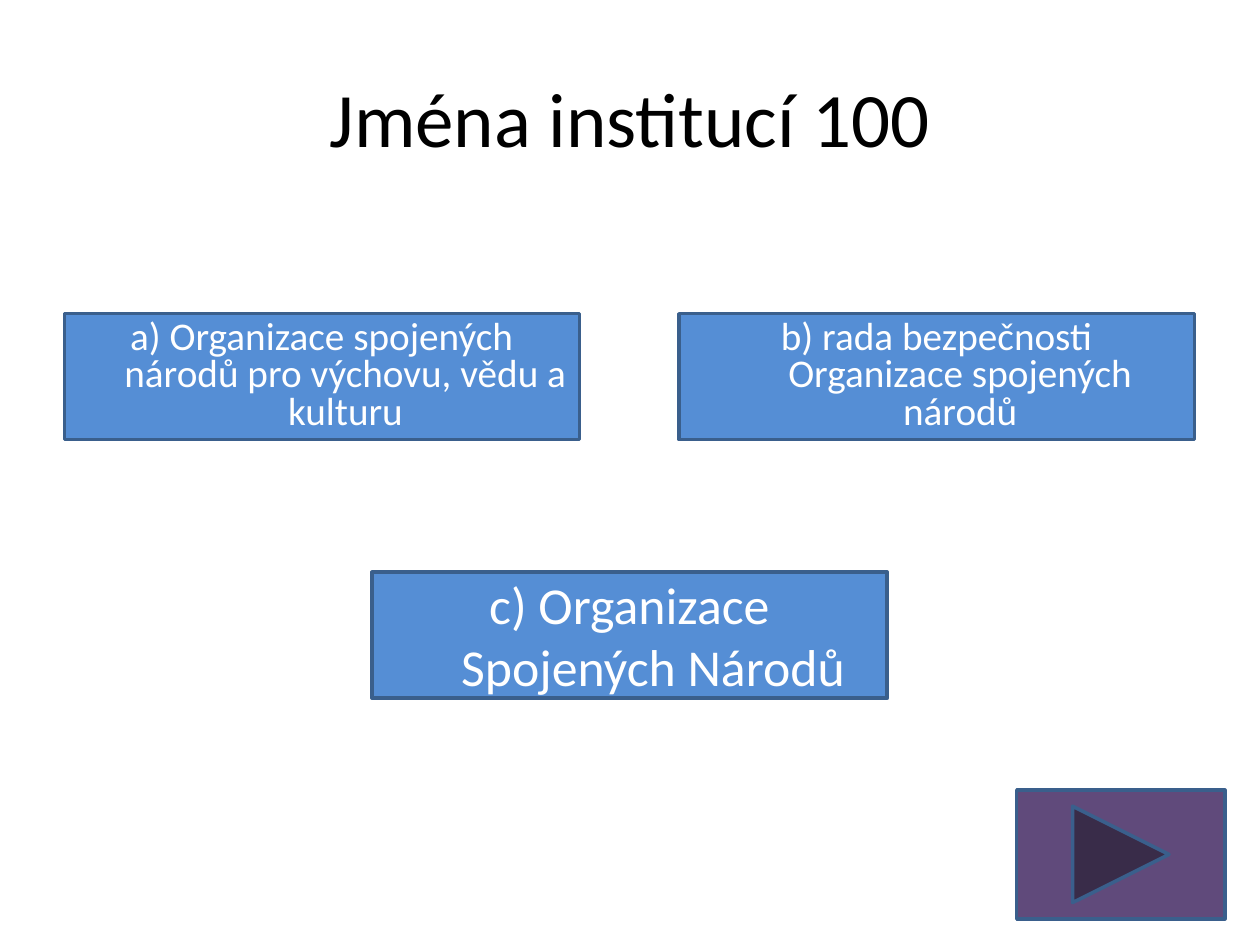
from pptx import Presentation
from pptx.dml.color import RGBColor as Color
from pptx.enum.shapes import MSO_SHAPE as Preset
from pptx.enum.text import MSO_ANCHOR as Anchor, PP_ALIGN as Align
from pptx.util import Pt

COLORS = {
    "title": "000000",
    "answer": "558ED5",
    "answer_text": "FFFFFF",
    "next": "604A7B",
    "border": "3A5F8C",
}
ANSWER_WIDTH, ANSWER_HEIGHT = 294.5, 72
UPPER_ROW, LOWER_ROW = 179.25, 327
ANSWERS = [
    ("a) Organizace spojených národů pro výchovu, vědu a kulturu", 36.75, UPPER_ROW, 22.4, 0.8),
    ("b) rada bezpečnosti Organizace spojených národů", 388, UPPER_ROW, 22.4, 0.8),
    ("c) Organizace Spojených Národů", 212.5, LOWER_ROW, 29.6, 1.0),
]


class QuizSlide:
    font_name = "Calibri"
    border_width = 2
    hanging_indent = 27

    def __init__(self, presentation):
        self.slide = presentation.slides.add_slide(presentation.slide_layouts[5])

    def place(self, shape, left, top, width, height):
        box = {"left": left, "top": top, "width": width, "height": height}
        for name, value in box.items():
            setattr(shape, name, Pt(value))

    def set_text(self, shape, text, size, color, paragraph_format):
        frame = shape.text_frame
        frame.text = text
        frame.word_wrap = True
        frame.vertical_anchor = Anchor.MIDDLE
        paragraph = frame.paragraphs[0]
        for name, value in {"alignment": Align.CENTER, **paragraph_format}.items():
            setattr(paragraph, name, value)
        font = paragraph.runs[0].font
        for name, value in {"name": self.font_name, "size": Pt(size)}.items():
            setattr(font, name, value)
        font.color.rgb = Color.from_string(COLORS[color])
        return paragraph

    def title(self, text):
        shape = self.slide.shapes.title
        self.place(shape, 36, 21.6, 648, 90)
        self.set_text(shape, text, 44, "title", {})

    def button(self, preset, fill, left, top, width, height):
        lengths = [Pt(value) for value in (left, top, width, height)]
        shape = self.slide.shapes.add_shape(preset, *lengths)
        shape.shadow.inherit = False
        shape.fill.solid()
        shape.fill.fore_color.rgb = Color.from_string(COLORS[fill])
        shape.line.color.rgb = Color.from_string(COLORS["border"])
        shape.line.width = Pt(self.border_width)
        return shape

    def answer(self, text, left, top, size, line_spacing):
        shape = self.button(Preset.ACTION_BUTTON_CUSTOM, "answer", left, top, ANSWER_WIDTH, ANSWER_HEIGHT)
        spacing = {"line_spacing": line_spacing, "space_before": Pt(size * 0.2)}
        paragraph = self.set_text(shape, text, size, "answer_text", spacing)
        properties = paragraph._p.get_or_add_pPr()
        for name, sign in {"marL": 1, "indent": -1}.items():
            properties.set(name, str(sign * Pt(self.hanging_indent)))


def main():
    presentation = Presentation()
    presentation.slide_width = Pt(720)
    presentation.slide_height = Pt(540)
    quiz = QuizSlide(presentation)
    quiz.title("Jména institucí 100")
    for answer in ANSWERS:
        quiz.answer(*answer)
    quiz.button(Preset.ACTION_BUTTON_FORWARD_OR_NEXT, "next", 581, 451.5, 119, 73.5)
    presentation.save("out.pptx")


if __name__ == "__main__":
    main()
